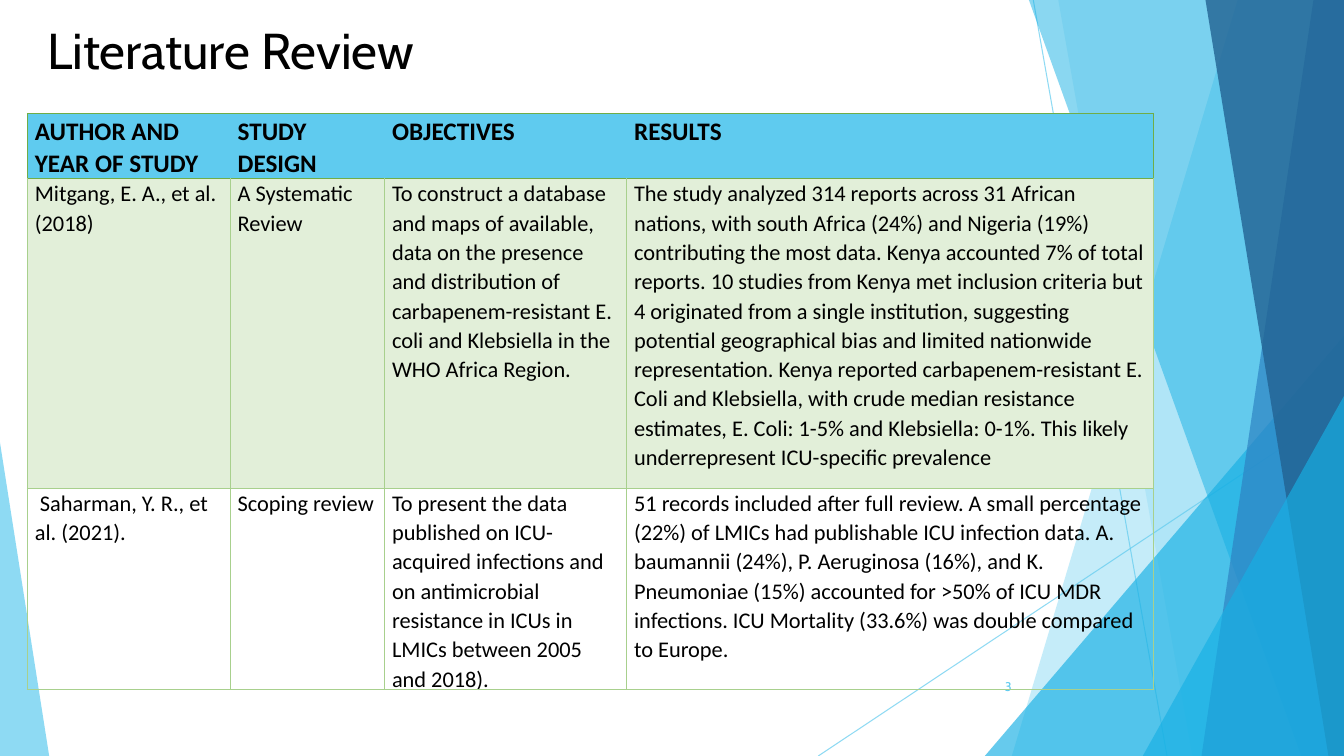
from lxml import etree
from pptx import Presentation
from pptx.dml.color import RGBColor
from pptx.enum.shapes import MSO_CONNECTOR, MSO_SHAPE
from pptx.enum.text import MSO_ANCHOR, PP_ALIGN
from pptx.oxml.ns import qn
from pptx.util import Cm, Pt

LINE = MSO_CONNECTOR.STRAIGHT
PEAK = MSO_SHAPE.ISOSCELES_TRIANGLE
LEFT, RIGHT = PP_ALIGN.LEFT, PP_ALIGN.RIGHT
TOP, MIDDLE = MSO_ANCHOR.TOP, MSO_ANCHOR.MIDDLE

WIDE, HIGH = 33.87, 19.05
HUES = {
    "sky": "5FCBEF", "aqua": "17B0E4", "blue": "2E83C3", "navy": "226292",
    "ink": "000000", "leaf": "70AD47", "lime": "A8D08D", "mint": "E2EFD9",
}

HEADS = ["AUTHOR AND YEAR OF STUDY", "STUDY DESIGN", "OBJECTIVES", "RESULTS"]
STUDIES = [
    ["Mitgang, E. A., et al. (2018)",
     "A Systematic Review",
     "To construct a database and maps of available, data on the presence and "
     "distribution of carbapenem-resistant E. coli and Klebsiella in the WHO "
     "Africa Region.",
     "The study analyzed 314 reports across 31 African nations, with south "
     "Africa (24%) and Nigeria (19%) contributing the most data. Kenya "
     "accounted 7% of total reports. 10 studies from Kenya met inclusion "
     "criteria but 4 originated from a single institution, suggesting "
     "potential geographical bias and limited nationwide representation. "
     "Kenya reported carbapenem-resistant E. Coli and Klebsiella, with crude "
     "median resistance estimates, E. Coli: 1-5% and Klebsiella: 0-1%. This "
     "likely underrepresent ICU-specific prevalence"],
    [" Saharman, Y. R., et al. (2021).",
     "Scoping review",
     "To present the data published on ICU-acquired infections and on "
     "antimicrobial resistance in ICUs in LMICs between 2005 and 2018).",
     "51 records included after full review. A small percentage (22%) of LMICs "
     "had publishable ICU infection data. A. baumannii (24%), P. Aeruginosa "
     "(16%), and K. Pneumoniae (15%) accounted for >50% of ICU MDR infections. "
     "ICU Mortality (33.6%) was double compared to Europe."],
]


def write(frame, text, font="Calibri", size=16, hue="ink", bold=False,
          align=LEFT, space=None, after=0):
    frame.word_wrap = True
    para = frame.paragraphs[0]
    para.alignment = align
    para.line_spacing = space
    para.space_after = Pt(after)
    run = para.add_run()
    run.text = text
    run.font.name = font
    run.font.size = Pt(size)
    run.font.bold = bold
    run.font.color.rgb = RGBColor.from_string(HUES[hue])


def fade(node, alpha):
    color = next(node.iter(qn("a:srgbClr")))
    etree.SubElement(color, qn("a:alpha")).set("val", str(alpha * 1000))


def edge(cell, side, hue):
    line = etree.SubElement(cell._tc.get_or_add_tcPr(), qn("a:ln" + side))
    line.set("w", str(Pt(1)))
    if hue is None:
        etree.SubElement(line, qn("a:noFill"))
        return
    fill = etree.SubElement(line, qn("a:solidFill"))
    etree.SubElement(fill, qn("a:srgbClr")).set("val", HUES[hue])


class Deck:
    def __init__(self):
        self.show = Presentation()
        self.show.slide_width = Cm(WIDE)
        self.show.slide_height = Cm(HIGH)
        self.slide = self.show.slides.add_slide(self.show.slide_layouts[6])
        self.shapes = self.slide.shapes

    def paint(self, shape, hue, alpha):
        shape.shadow.inherit = False
        shape.fill.solid()
        shape.fill.fore_color.rgb = RGBColor.from_string(HUES[hue])
        shape.line.fill.background()
        fade(shape._element.spPr, alpha)

    def line(self, *ends):
        rule = self.shapes.add_connector(LINE, *map(Cm, ends))
        rule.line.width = Pt(0.75)
        rule.line.color.rgb = RGBColor.from_string(HUES["sky"])
        props = rule._element.spPr
        fade(props, 70)
        etree.SubElement(props, qn("a:effectLst"))

    def band(self, top, base, hue, alpha):
        form = self.shapes.build_freeform(Cm(top), 0, scale=1.0)
        form.add_line_segments(
            [(Cm(x), Cm(y)) for x, y in [(WIDE, 0), (WIDE, HIGH), (base, HIGH)]])
        self.paint(form.convert_to_shape(), hue, alpha)

    def peak(self, left, top, width, tip, hue, alpha):
        shape = self.shapes.add_shape(
            PEAK, Cm(left), Cm(top), Cm(width), Cm(HIGH - top))
        shape.adjustments[0] = tip
        self.paint(shape, hue, alpha)

    def text(self, box, words, **style):
        frame = self.shapes.add_textbox(*map(Cm, box)).text_frame
        frame.vertical_anchor = MIDDLE
        write(frame, words, **style)

    def cell(self, cell, words, sides, fill, **style):
        cell.margin_left = cell.margin_right = Cm(0.19)
        cell.margin_top = cell.margin_bottom = 0
        cell.vertical_anchor = TOP
        for side, hue in sides.items():
            edge(cell, side, hue)
        if fill:
            cell.fill.solid()
            cell.fill.fore_color.rgb = RGBColor.from_string(HUES[fill])
        else:
            cell.fill.background()
        write(cell.text_frame, words, space=1.07, after=8, **style)

    def table(self, left, top, wide, tall):
        grid = self.shapes.add_table(
            len(tall), len(wide), Cm(left), Cm(top),
            Cm(sum(wide)), Cm(sum(tall))).table
        grid.first_row = grid.horz_banding = False
        for col, width in zip(grid.columns, wide):
            col.width = Cm(width)
        for row, height in zip(grid.rows, tall):
            row.height = Cm(height)
        last = len(wide) - 1
        for i, words in enumerate(HEADS):
            sides = {"L": "leaf" if i == 0 else None,
                     "R": "leaf" if i == last else None,
                     "T": "leaf", "B": "leaf"}
            self.cell(grid.cell(0, i), words, sides, "sky", size=18, bold=True)
        for j, study in enumerate(STUDIES, 1):
            sides = {"L": "lime", "R": "lime",
                     "T": "leaf" if j == 1 else "lime", "B": "lime"}
            for i, words in enumerate(study):
                self.cell(grid.cell(j, i), words, sides, "mint" if j % 2 else None)


def main():
    deck = Deck()
    deck.line(26.04, 0, 29.41, HIGH)
    deck.line(WIDE, 10.24, 20.62, HIGH)
    deck.band(31.19, 25.5, "sky", 36)
    deck.band(26.67, 30.05, "sky", 20)
    deck.peak(24.82, 8.46, 9.05, 1, "aqua", 66)
    deck.band(25.93, 32.79, "aqua", 50)
    deck.band(33.1, 30.28, "blue", 70)
    deck.band(30.38, 33.48, "navy", 80)
    deck.peak(28.8, 9.98, 5.07, 1, "aqua", 66)
    deck.peak(0, 11.15, 1.24, 0, "sky", 70)
    deck.text((0.94, 0.3, 23.88, 1.9), "Literature Review", font="Cabin", size=36)
    deck.text((23.85, 16.79, 1.9, 1.02), "3", font="Cabin", size=9, hue="sky",
              align=RIGHT)
    deck.table(0.69, 2.87, [5.11, 3.89, 6.1, 13.28], [1.57, 7.8, 4.83])
    deck.show.save("out.pptx")


if __name__ == "__main__":
    main()
